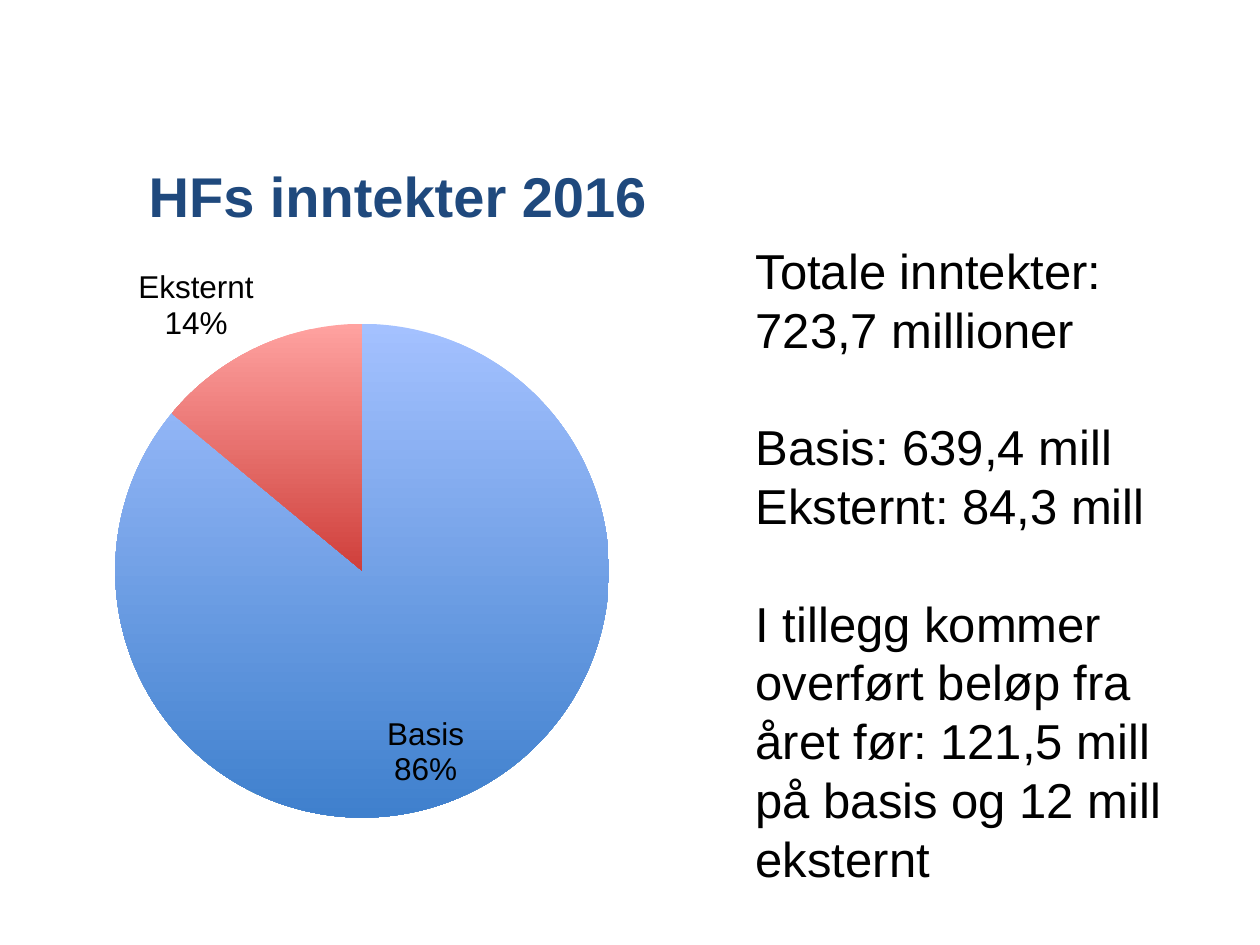
"""Build the income slide with a pie chart and a summary text."""
from dataclasses import dataclass

import pptx
import pptx.chart.data
import pptx.dml.color
import pptx.enum.chart
import pptx.enum.text
import pptx.oxml
import pptx.oxml.ns
import pptx.util
from pptx.util import Inches

FONT = "Arial"
LINE = pptx.util.Pt(33.6)
POSITION = pptx.enum.chart.XL_LABEL_POSITION


@dataclass
class Slice:
    name: str
    percent: int
    top: str
    bottom: str
    position: POSITION


@dataclass
class Line:
    text: str
    gap: bool = False


SLICES = [
    Slice("Basis", 86, "A4C1FF", "3F80CD", POSITION.INSIDE_END),
    Slice("Eksternt", 14, "FFA2A0", "CF3F3B", POSITION.OUTSIDE_END),
]
LINES = [
    Line("Totale inntekter: 723,7 millioner"),
    Line("Basis: 639,4 mill", gap=True),
    Line("Eksternt: 84,3 mill"),
    Line("I tillegg kommer overført beløp fra året før: 121,5 mill "
         "på basis og 12 mill eksternt", gap=True),
]


def rgb(value: str) -> pptx.dml.color.RGBColor:
    return pptx.dml.color.RGBColor.from_string(value)


def set_font(font, size: float, color: str, bold: bool = False) -> None:
    font.name, font.size, font.bold = FONT, pptx.util.Pt(size), bold
    font.color.rgb = rgb(color)


def add_title(s, text: str) -> None:
    sp = s.shapes.title
    sp.left, sp.top = Inches(1.08), Inches(0.92)
    sp.width, sp.height = Inches(8.42), Inches(1.25)
    tf = sp.text_frame
    tf.text = text
    tf.vertical_anchor = pptx.enum.text.MSO_ANCHOR.MIDDLE
    p = tf.paragraphs[0]
    p.alignment = pptx.enum.text.PP_ALIGN.LEFT
    set_font(p.font, 32, "1F497D", bold=True)


def set_plot_layout(chart, x: float, y: float, w: float, h: float) -> None:
    area = chart._chartSpace.chart.plotArea
    for old in area.findall(pptx.oxml.ns.qn("c:layout")):
        area.remove(old)
    area.insert(0, pptx.oxml.parse_xml(
        f'<c:layout {pptx.oxml.ns.nsdecls("c")}><c:manualLayout>'
        '<c:layoutTarget val="inner"/><c:xMode val="edge"/><c:yMode val="edge"/>'
        f'<c:x val="{x}"/><c:y val="{y}"/><c:w val="{w}"/><c:h val="{h}"/>'
        '</c:manualLayout></c:layout>'))


def show_name_and_percent(series) -> None:
    qn = pptx.oxml.ns.qn
    flags = {"c:showVal": "0", "c:showCatName": "1", "c:showPercent": "1"}
    for label in series._element.iter(qn("c:dLbl")):
        for tag, value in flags.items():
            label.find(qn(tag)).set("val", value)
        label.append(pptx.oxml.parse_xml(
            f'<c:separator {pptx.oxml.ns.nsdecls("c")}>\n</c:separator>'))


def add_pie(s, slices: list[Slice]) -> None:
    data = pptx.chart.data.CategoryChartData(number_format="0")
    data.categories = [item.name for item in slices]
    data.add_series("Series 1", [item.percent for item in slices])
    chart = s.shapes.add_chart(
        pptx.enum.chart.XL_CHART_TYPE.PIE, Inches(-1.3), Inches(2.02),
        Inches(8.52), Inches(4.97), data).chart
    chart.has_title = chart.has_legend = False
    set_font(chart.font, 18, "000000")
    set_plot_layout(chart, 0.26, 0.11, 0.46, 0.79)
    series = chart.plots[0].series[0]
    for i, item in enumerate(slices):
        point = series.points[i]
        fill = point.format.fill
        fill.gradient()
        fill.gradient_angle = 270
        for stop, color in zip(fill.gradient_stops, (item.top, item.bottom)):
            stop.color.rgb = rgb(color)
        point.data_label.position = item.position
    show_name_and_percent(series)


def add_summary(s, lines: list[Line]) -> None:
    tf = s.shapes.add_textbox(
        Inches(5.9), Inches(1.86), Inches(3.7), Inches(5.28)).text_frame
    tf.word_wrap = True
    for i, line in enumerate(lines):
        p = tf.add_paragraph() if i else tf.paragraphs[0]
        p.text = line.text
        p.line_spacing = LINE
        if line.gap:
            p.space_before = LINE
        set_font(p.font, 28, "000000")


def main() -> None:
    prs = pptx.Presentation()
    prs.slide_width, prs.slide_height = Inches(10), Inches(7.5)
    s = prs.slides.add_slide(prs.slide_layouts[5])
    add_title(s, "HFs inntekter 2016")
    add_pie(s, SLICES)
    add_summary(s, LINES)
    prs.save("out.pptx")


if __name__ == "__main__":
    main()
